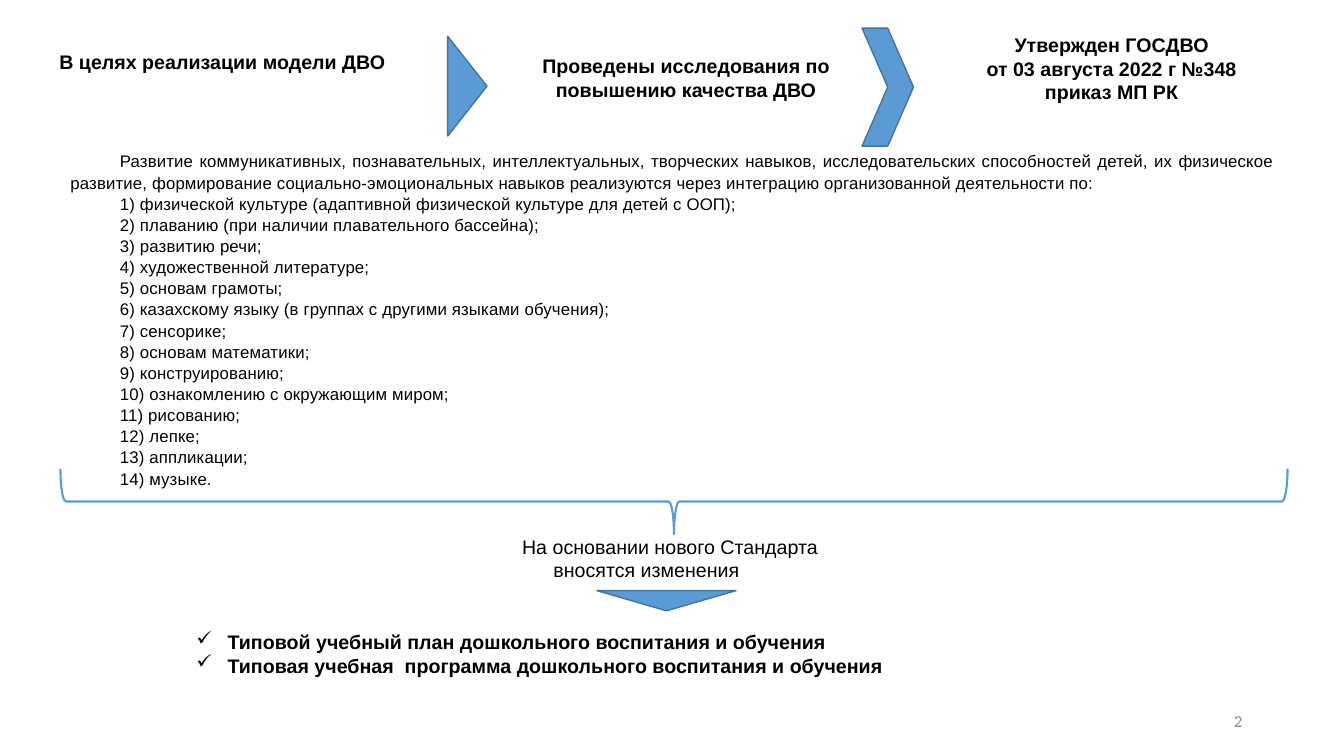
from lxml.etree import SubElement
from pptx import Presentation
from pptx.dml.color import RGBColor
from pptx.enum.shapes import MSO_SHAPE as Shape
from pptx.enum.text import MSO_ANCHOR as Anchor, MSO_AUTO_SIZE as AutoSize, PP_ALIGN as Align
from pptx.oxml.ns import qn
from pptx.util import Inches, Pt

BLUE = "5B9BD5"
OUTLINE = "43739E"
BLACK = "000000"
WHITE = "FFFFFF"
GREY = "8C8C8C"

INTRO = (
    "Развитие коммуникативных, познавательных, интеллектуальных, творческих навыков, "
    "исследовательских способностей детей, их физическое развитие, формирование "
    "социально-эмоциональных навыков реализуются через интеграцию организованной деятельности по:"
)
ACTIVITIES = [
    "физической культуре (адаптивной физической культуре для детей с ООП);",
    "плаванию (при наличии плавательного бассейна);",
    "развитию речи;",
    "художественной литературе;",
    "основам грамоты;",
    "казахскому языку (в группах с другими языками обучения);",
    "сенсорике;",
    "основам математики;",
    "конструированию;",
    "ознакомлению с окружающим миром;",
    "рисованию;",
    "лепке;",
    "аппликации;",
    "музыке.",
]
ORDER = ["Утвержден ГОСДВО", "от 03 августа 2022 г №348", "приказ МП РК"]
PROGRAMMES = [
    "Типовой учебный план дошкольного воспитания и обучения",
    "Типовая учебная  программа дошкольного воспитания и обучения",
]


def colour(value):
    return RGBColor.from_string(value)


def apply_format(target, values):
    for name, value in values.items():
        setattr(target, name, value)


def add_text(page, place, lines, size=14, bold=False, align=Align.LEFT,
             font="Arial", ink=BLACK, wrap=True, anchor=Anchor.TOP):
    box = page.shapes.add_textbox(*map(Inches, place))
    frame = box.text_frame
    apply_format(frame, {"word_wrap": wrap, "auto_size": AutoSize.NONE, "vertical_anchor": anchor})
    for index, line in enumerate(lines):
        para = frame.paragraphs[0] if index == 0 else frame.add_paragraph()
        para.alignment = align
        span = para.add_run()
        span.text = line
        apply_format(span.font, {"size": Pt(size), "bold": bold, "name": font})
        span.font.color.rgb = colour(ink)
    return box


def set_indent(para, margin, first):
    properties = para._p.get_or_add_pPr()
    properties.set("marL", str(Inches(margin)))
    properties.set("indent", str(Inches(first)))
    return properties


def add_activities(page):
    lines = [INTRO] + [f"{number}) {name}" for number, name in enumerate(ACTIVITIES, 1)]
    box = add_text(page, (0.6, 1.44, 12.15, 3.67), lines, size=12, align=Align.JUSTIFY)
    box.fill.solid()
    box.fill.fore_color.rgb = colour(WHITE)
    for para in box.text_frame.paragraphs:
        para.line_spacing = 1.05
        set_indent(para, 0, 0.49)
        para.runs[0].font._element.set("spc", "10")


def add_checklist(page, place, lines):
    box = add_text(page, place, lines, bold=True)
    for para in box.text_frame.paragraphs:
        properties = set_indent(para, 0.31, -0.31)
        SubElement(properties, qn("a:buChar")).set("char", "✓")


def add_figure(page, kind, place, fill=BLUE, line=OUTLINE, width=1, rotation=0):
    figure = page.shapes.add_shape(kind, *map(Inches, place))
    apply_format(figure, {"rotation": rotation})
    figure.shadow.inherit = False
    if fill:
        figure.fill.solid()
        figure.fill.fore_color.rgb = colour(fill)
    else:
        figure.fill.background()
    figure.line.color.rgb = colour(line)
    figure.line.width = Pt(width)


def main():
    deck = Presentation()
    apply_format(deck, {"slide_width": Inches(13.33), "slide_height": Inches(7.5)})
    page = deck.slides.add_slide(deck.slide_layouts[6])

    add_activities(page)
    add_figure(page, Shape.CHEVRON, (8.55, 0.28, 0.51, 1.17))
    add_text(page, (9.15, 0.28, 3.75, 0.81), ORDER, bold=True, align=Align.CENTER)
    add_text(page, (0.49, 0.45, 4.35, 0.34), ["В целях реализации модели ДВО"], bold=True)
    add_figure(page, Shape.FLOWCHART_MERGE, (4.14, 0.66, 0.99, 0.39), rotation=270)
    add_text(page, (4.94, 0.49, 3.73, 0.57),
             ["Проведены исследования по повышению качества ДВО"], bold=True, align=Align.CENTER)
    add_checklist(page, (1.85, 6.2, 9.67, 0.57), PROGRAMMES)
    add_figure(page, Shape.LEFT_BRACE, (6.36, -1.11, 0.65, 12.17),
               fill=None, line=BLUE, width=1.5, rotation=270)
    add_text(page, (5.08, 5.26, 3.16, 0.34), ["На основании нового Стандарта"], wrap=False)
    add_text(page, (5.39, 5.49, 2.52, 0.34), ["вносятся изменения"])
    add_figure(page, Shape.FLOWCHART_MERGE, (5.92, 5.86, 1.38, 0.2))
    add_text(page, (9.42, 6.95, 3, 0.4), ["2"], size=12, align=Align.RIGHT,
             font="Calibri", ink=GREY, anchor=Anchor.MIDDLE)

    deck.save("out.pptx")


if __name__ == "__main__":
    main()
